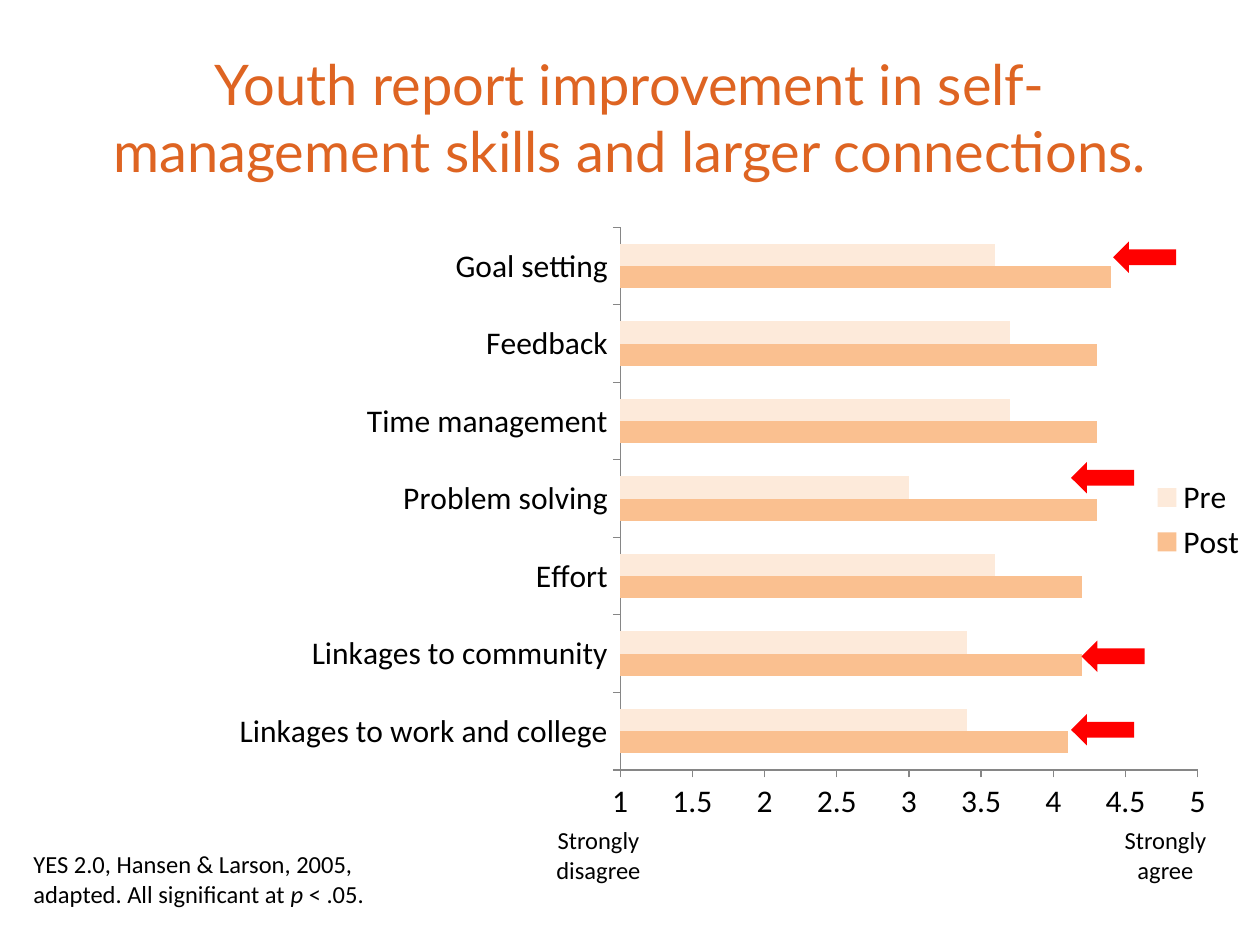
from dataclasses import dataclass

from lxml import etree
from pptx import Presentation
from pptx import util as u
from pptx.chart.data import CategoryChartData
from pptx.dml.color import RGBColor
from pptx.enum import chart as ch, shapes, text
from pptx.oxml.ns import qn


@dataclass(frozen=True)
class Theme:
    title: str = "DE6422"
    ink: str = "000000"
    axis: str = "868686"
    post: str = "FAC090"
    pre: str = "FDEADA"
    marker: str = "FF0000"
    head_font: str = "Lato"
    body_font: str = "Calibri"
    title_size: int = 32
    chart_size: int = 18
    note_size: int = 14


def set_attrs(obj, values):
    for name, value in values.items():
        setattr(obj, name, value)


class Deck:
    """Holds the theme and current slide; lengths are cells of a 120 x 90 grid."""

    COLS, ROWS = 120, 90

    def __init__(self, theme):
        self.t = theme
        self.prs = Presentation()
        self.prs.slide_width, self.prs.slide_height = u.Inches(10), u.Inches(7.5)
        self.s = self.prs.slides.add_slide(self.prs.slide_layouts[5])

    def box(self, x, y, w, h):
        dx = self.prs.slide_width / self.COLS
        dy = self.prs.slide_height / self.ROWS
        return [int(v) for v in (x * dx, y * dy, w * dx, h * dy)]

    def font(self, font, name, size, color, **extra):
        set_attrs(font, dict(name=name, size=u.Pt(size), **extra))
        font.color.rgb = RGBColor.from_string(color)

    def title(self, words, *cells):
        sp = self.s.shapes.title
        set_attrs(sp, dict(zip(("left", "top", "width", "height"), self.box(*cells))))
        tf = sp.text_frame
        set_attrs(tf, dict(word_wrap=True, auto_size=text.MSO_AUTO_SIZE.NONE,
                           vertical_anchor=text.MSO_ANCHOR.MIDDLE))
        p = tf.paragraphs[0]
        p.alignment = text.PP_ALIGN.CENTER
        r = p.add_run()
        r.text = words
        self.font(r.font, self.t.head_font, self.t.title_size, self.t.title)

    def note(self, runs, *cells, align=text.PP_ALIGN.LEFT):
        tf = self.s.shapes.add_textbox(*self.box(*cells)).text_frame
        tf.word_wrap = True
        p = tf.paragraphs[0]
        p.alignment = align
        for words, italic in runs:
            r = p.add_run()
            r.text = words
            self.font(r.font, self.t.body_font, self.t.note_size, self.t.ink,
                      italic=italic)

    def arrow(self, *cells):
        sp = self.s.shapes.add_shape(shapes.MSO_SHAPE.RIGHT_ARROW, *self.box(*cells))
        sp.rotation = 180
        sp.shadow.inherit = False
        sp.fill.solid()
        sp.fill.fore_color.rgb = RGBColor.from_string(self.t.marker)
        sp.line.fill.background()

    def bars(self, cats, series, plot_area, *cells):
        data = CategoryChartData()
        data.categories = cats
        for name, values, _ in series:
            data.add_series(name, values)
        chart = self.s.shapes.add_chart(
            ch.XL_CHART_TYPE.BAR_CLUSTERED, *self.box(*cells), data).chart
        set_attrs(chart, dict(has_title=False, has_legend=True))
        self.font(chart.font, self.t.body_font, self.t.chart_size, self.t.ink)
        set_attrs(chart.legend, dict(position=ch.XL_LEGEND_POSITION.RIGHT,
                                     include_in_layout=False))
        plot = chart.plots[0]
        set_attrs(plot, dict(gap_width=150, vary_by_categories=False))
        for ser, (_, _, color) in zip(plot.series, series):
            ser.format.fill.solid()
            ser.format.fill.fore_color.rgb = RGBColor.from_string(color)
        # Axes
        for axis in (chart.category_axis, chart.value_axis):
            set_attrs(axis, dict(has_major_gridlines=False,
                                 major_tick_mark=ch.XL_TICK_MARK.OUTSIDE,
                                 minor_tick_mark=ch.XL_TICK_MARK.NONE))
            axis.format.line.width = u.Pt(0.75)
            axis.format.line.color.rgb = RGBColor.from_string(self.t.axis)
        set_attrs(chart.value_axis, dict(minimum_scale=1, maximum_scale=5,
                                         major_unit=0.5))
        # Fixed inner plot area, as shares of the chart
        area = chart.plots[0]._element.getparent()
        for old in area.findall(qn("c:layout")):
            area.remove(old)
        layout = etree.Element(qn("c:layout"))
        area.insert(0, layout)
        manual = etree.SubElement(layout, qn("c:manualLayout"))
        settings = [("layoutTarget", "inner"), ("xMode", "edge"), ("yMode", "edge")]
        for tag, val in settings + list(zip("xywh", plot_area)):
            etree.SubElement(manual, qn("c:" + tag)).set("val", str(val))


def main():
    theme = Theme()
    d = Deck(theme)
    d.title("Youth report improvement in self-management skills and larger "
            "connections.", 6, 3.6, 108, 15)

    # Pre and post ratings, listed from the bottom bar up
    cats = ["Linkages to work and college", "Linkages to community", "Effort",
            "Problem solving", "Time management", "Feedback", "Goal setting"]
    series = [("Post", (4.1, 4.2, 4.2, 4.3, 4.3, 4.3, 4.4), theme.post),
              ("Pre", (3.4, 3.4, 3.6, 3, 3.7, 3.7, 3.6), theme.pre)]
    d.bars(cats, series, (0.456, 0.028, 0.491, 0.876), 8, 20, 112, 59)

    # Source note and scale ends
    d.note([("YES 2.0, Hansen & Larson, 2005, adapted. All significant at ", False),
            ("p", True), (" < .05.", False)], 2, 80.3, 40, 9.7)
    for words, x in (("Strongly disagree", 50), ("Strongly agree", 104)):
        d.note([(words, False)], x, 78, 14, 6.8, align=text.PP_ALIGN.CENTER)

    # Arrows marking the largest gains
    for x, y in ((102, 44), (106, 23), (103, 61), (102, 68)):
        d.arrow(x, y, 6, 3)

    d.prs.save("out.pptx")


if __name__ == "__main__":
    main()
